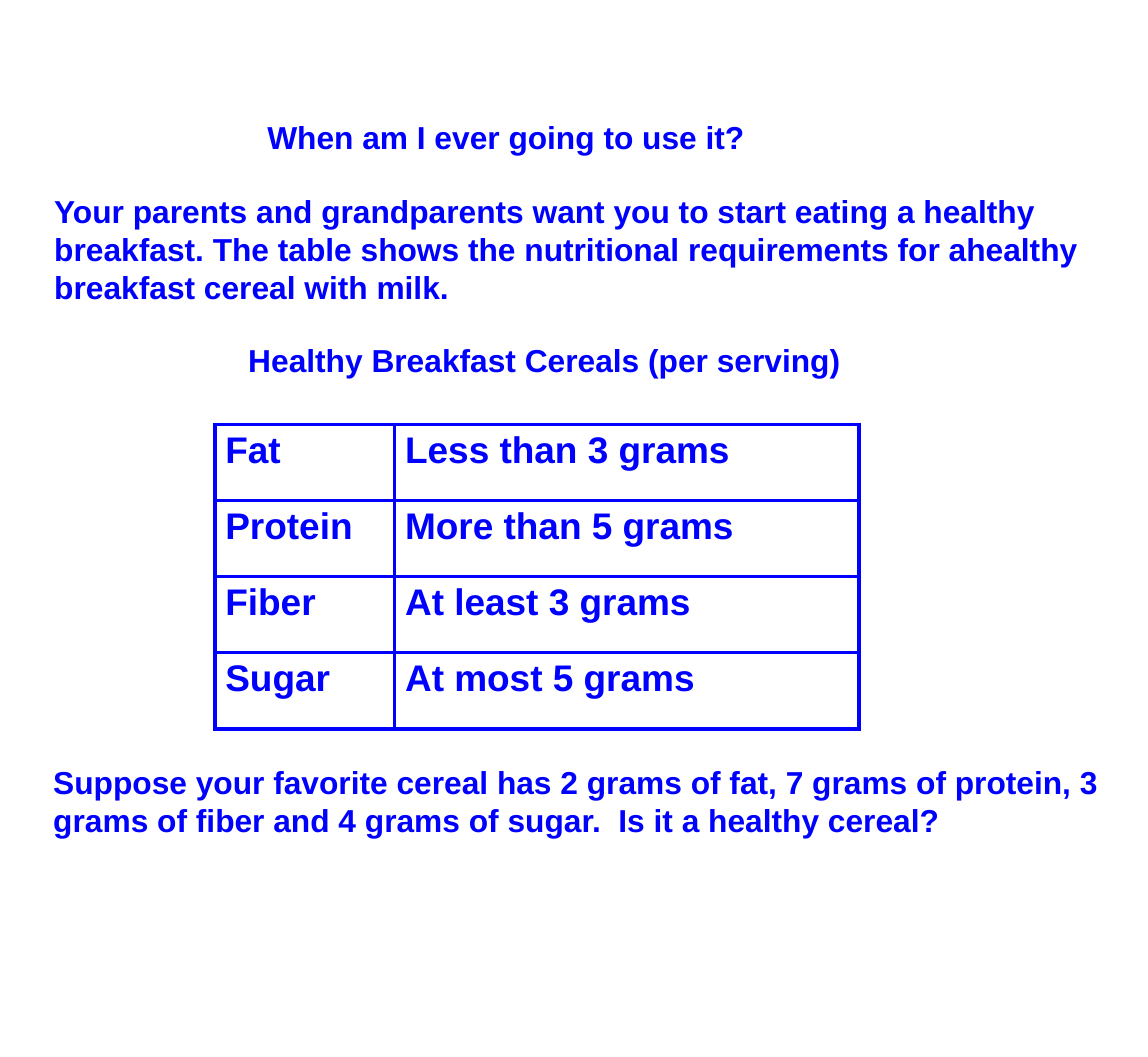
from lxml.etree import SubElement
from pptx import Presentation
from pptx.dml.color import RGBColor
from pptx.enum.text import MSO_ANCHOR, MSO_AUTO_SIZE, PP_ALIGN
from pptx.oxml.ns import qn
from pptx.util import Inches, Pt

COLORS = {"ink": "0000FF", "paper": "FFFFFF"}
REQUIREMENTS = [
    ("Fat", "Less than 3 grams"),
    ("Protein", "More than 5 grams"),
    ("Fiber", "At least 3 grams"),
    ("Sugar", "At most 5 grams"),
]
COLUMN_WIDTHS = (1.89, 4.88)
ROW_HEIGHT = 0.8
FRAME_FORMAT = {
    "word_wrap": True,
    "auto_size": MSO_AUTO_SIZE.NONE,
    "vertical_anchor": MSO_ANCHOR.TOP,
    "margin_left": Inches(0.12),
    "margin_right": Inches(0.12),
    "margin_top": Inches(0.06),
    "margin_bottom": Inches(0.06),
}
CELL_FORMAT = {
    "vertical_anchor": MSO_ANCHOR.TOP,
    "margin_left": Inches(0.11),
    "margin_right": Inches(0.11),
    "margin_top": Inches(0.06),
    "margin_bottom": Inches(0.06),
}


def apply_format(target, values):
    """Set every attribute in values on the target."""
    for name, value in values.items():
        setattr(target, name, value)


def write_text(frame, text, size):
    """Write one left-aligned bold paragraph in the ink colour."""
    paragraph = frame.paragraphs[0]
    paragraph.alignment = PP_ALIGN.LEFT
    run = paragraph.add_run()
    run.text = text
    apply_format(run.font, {"name": "Arial", "size": Pt(size), "bold": True})
    run.font.color.rgb = RGBColor.from_string(COLORS["ink"])


def set_title(slide, text, left, top, width, height):
    """Place and format the title placeholder."""
    heading = slide.shapes.title
    box = {"left": left, "top": top, "width": width, "height": height}
    apply_format(heading, {side: Inches(value) for side, value in box.items()})
    apply_format(heading.text_frame, FRAME_FORMAT)
    write_text(heading.text_frame, text, 24)


def add_passage(slide, text, *box):
    """Add a wrapped text box."""
    frame = slide.shapes.add_textbox(*map(Inches, box)).text_frame
    apply_format(frame, FRAME_FORMAT)
    write_text(frame, text, 24)


def add_borders(cell):
    """Draw ink lines on all four sides of a cell."""
    properties = cell._tc.get_or_add_tcPr()
    for position, side in enumerate(("lnL", "lnR", "lnT", "lnB")):
        line = SubElement(properties, qn(f"a:{side}"), w=str(Pt(3)))
        fill = SubElement(line, qn("a:solidFill"))
        SubElement(fill, qn("a:srgbClr"), val=COLORS["ink"])
        properties.insert(position, line)


def add_requirements(slide, left, top):
    """Add the table of nutritional requirements."""
    rows = len(REQUIREMENTS)
    size = (sum(COLUMN_WIDTHS), rows * ROW_HEIGHT)
    table = slide.shapes.add_table(
        rows, len(COLUMN_WIDTHS), *map(Inches, (left, top, *size))
    ).table
    apply_format(table, {"first_row": False, "horz_banding": False})
    for column, width in zip(table.columns, COLUMN_WIDTHS):
        column.width = Inches(width)
    for row, texts in zip(table.rows, REQUIREMENTS):
        row.height = Inches(ROW_HEIGHT)
        for cell, text in zip(row.cells, texts):
            apply_format(cell, CELL_FORMAT)
            cell.fill.solid()
            cell.fill.fore_color.rgb = RGBColor.from_string(COLORS["paper"])
            add_borders(cell)
            write_text(cell.text_frame, text, 28)


def main():
    """Build the healthy cereal slide."""
    deck = Presentation()
    apply_format(deck, {"slide_width": Inches(12.07), "slide_height": Inches(11.11)})
    slide = deck.slides.add_slide(deck.slide_layouts.get_by_name("Title Only"))
    set_title(slide, "When am I ever going to use it?", 2.69, 1.18, 7.33, 0.52)
    add_passage(
        slide,
        "Your parents and grandparents want you to start eating a healthy "
        "breakfast. The table shows the nutritional requirements for ahealthy "
        "breakfast cereal with milk.",
        0.45, 1.96, 11.49, 1.33,
    )
    add_passage(slide, "Healthy Breakfast Cereals (per serving)", 2.49, 3.52, 8.96, 0.52)
    add_requirements(slide, 2.26, 4.46)
    add_passage(
        slide,
        "Suppose your favorite cereal has 2 grams of fat, 7 grams of protein, 3 "
        "grams of fiber and 4 grams of sugar.  Is it a healthy cereal?",
        0.44, 7.96, 11.47, 0.93,
    )
    deck.save("out.pptx")


if __name__ == "__main__":
    main()
